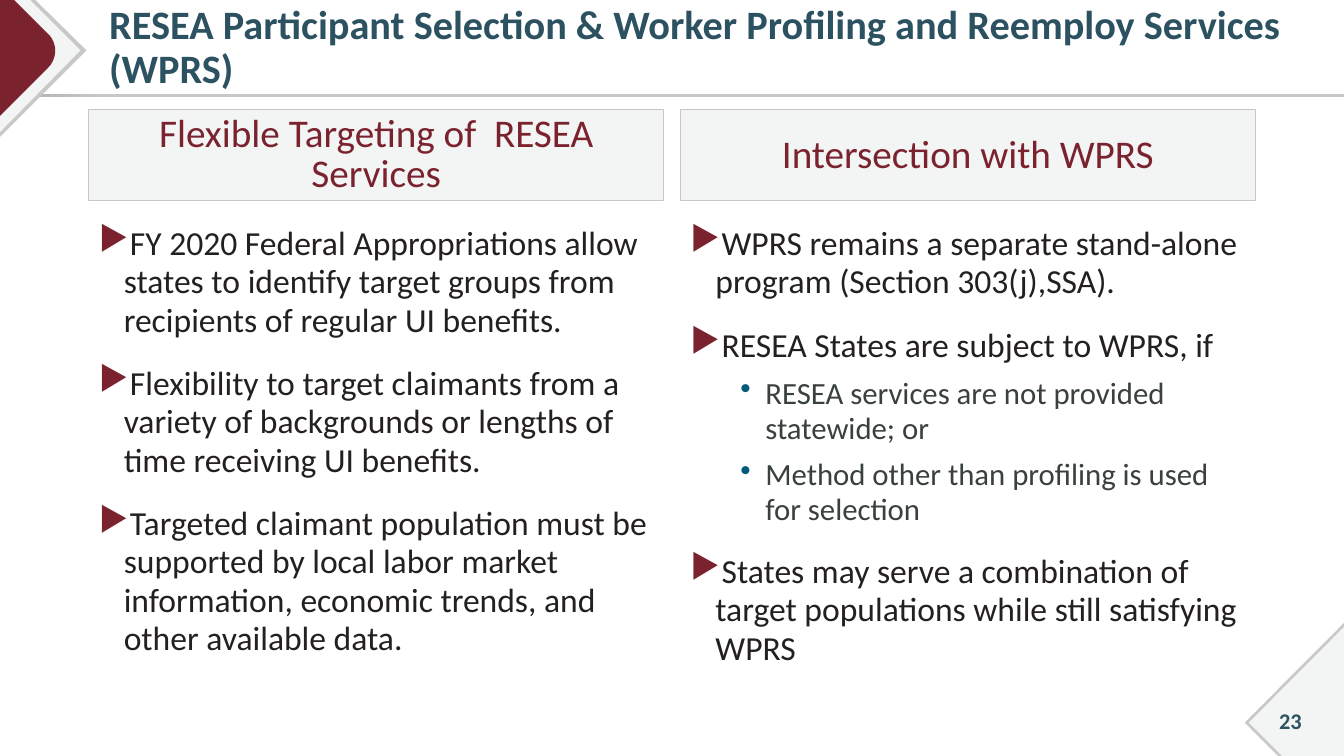
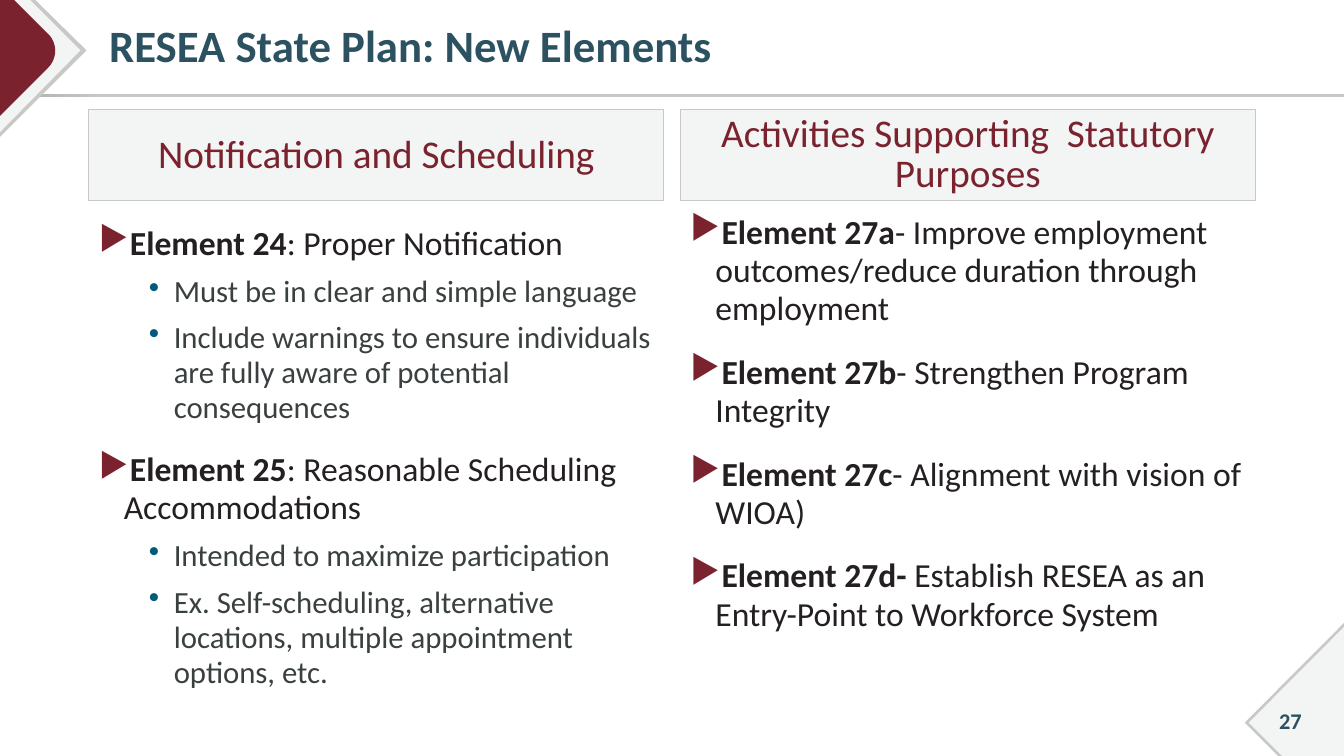
from dataclasses import dataclass

from lxml.etree import SubElement
from pptx import Presentation
from pptx.dml.color import RGBColor
from pptx.enum.shapes import MSO_SHAPE as SHAPE
from pptx.enum.text import MSO_ANCHOR as ANCHOR, MSO_AUTO_SIZE as AUTO, PP_ALIGN as ALIGN
from pptx.oxml.ns import qn
from pptx.util import Cm, Pt

FONT = "Calibri"
COLORS = {
    "title": "2C5261", "maroon": "7A232F", "gray": "C8C8C6", "dark_gray": "ABABA8",
    "pale": "F3F4F4", "body": "242021", "sub": "3A4040", "blue": "005A7C",
}
SLIDE_W, SLIDE_H = 33.87, 19.05
LEFT, COL_W, COL_PITCH = 2.24, 14.48, 14.91
HANGING = 0.63

Point = tuple[float, float]


@dataclass(frozen=True)
class Level:
    bullet: str
    bullet_color: str
    color: str
    size: float
    before: float
    margin: float


LEVELS = [
    Level("▶", "maroon", "body", 24, 18, HANGING),
    Level("•", "blue", "sub", 22, 8, 3 * HANGING),
]


@dataclass(frozen=True)
class Item:
    text: str
    lead: str = ""
    level: int = 0


@dataclass(frozen=True)
class Column:
    heading: str
    items: list[Item]
    heading_spacing: float = 0.95
    body_top: float = 5.54


@dataclass(frozen=True)
class Page:
    title: str
    number: str
    columns: list[Column]
    title_size: float = 32


@dataclass(frozen=True)
class Outline:
    points: list[Point]
    color: str


def curve(a: Point, b: Point, c: Point, d: Point, steps: int = 12) -> list[Point]:
    """Points along a cubic Bezier from a to d."""
    pts = []
    for i in range(steps + 1):
        t = i / steps
        weights = ((1 - t) ** 3, 3 * t * (1 - t) ** 2, 3 * t * t * (1 - t), t ** 3)
        pts.append(tuple(sum(w * q[k] for w, q in zip(weights, (a, b, c, d))) for k in (0, 1)))
    return pts


ROUNDED_TIP = curve((1.22, 0.86), (1.45, 1.09), (1.45, 1.47), (1.22, 1.7))
CORNERS = [
    Outline([(0, 0), (0.89, 0), (2.18, 1.27), (0, 3.45)], "gray"),
    Outline([(0, 0), (0.76, 0), (2.03, 1.27), (0, 3.33)], "pale"),
    Outline([(0, 0), (0.36, 0), *ROUNDED_TIP, (0, 2.92)], "maroon"),
    Outline([(SLIDE_W, 15.7), (SLIDE_W, SLIDE_H), (32.21, SLIDE_H), (31.37, 18.21)], "gray"),
    Outline([(SLIDE_W, 15.8), (SLIDE_W, SLIDE_H), (32.31, SLIDE_H), (31.47, 18.21)], "pale"),
]

PAGES = [
    Page("RESEA Participant Selection & Worker Profiling and Reemploy Services (WPRS)", "23", [
        Column("Flexible Targeting of  RESEA Services", [
            Item("FY 2020 Federal Appropriations allow states to identify target groups "
                 "from recipients of regular UI benefits."),
            Item("Flexibility to target claimants from a variety of backgrounds or lengths "
                 "of time receiving UI benefits."),
            Item("Targeted claimant population must be supported by local labor market "
                 "information, economic trends, and other available data."),
        ], heading_spacing=0.85),
        Column("Intersection with WPRS", [
            Item("WPRS remains a separate stand-alone program (Section 303(j),SSA)."),
            Item("RESEA States are subject to WPRS, if"),
            Item("RESEA services are not provided statewide; or", level=1),
            Item("Method other than profiling is used for selection", level=1),
            Item("States may serve a combination of target populations while still "
                 "satisfying WPRS"),
        ]),
    ], title_size=28.8),
    Page("RESEA State Plan: New Elements", "27", [
        Column("Notification and Scheduling", [
            Item(": Proper Notification", "Element 24"),
            Item("Must be in clear and simple language", level=1),
            Item("Include warnings to ensure individuals are fully aware of potential "
                 "consequences", level=1),
            Item(": Reasonable Scheduling Accommodations", "Element 25"),
            Item("Intended to maximize participation", level=1),
            Item("Ex. Self-scheduling, alternative locations, multiple appointment "
                 "options, etc.", level=1),
        ]),
        Column("Activities Supporting  Statutory Purposes", [
            Item("- Improve employment outcomes/reduce duration through employment",
                 "Element 27a"),
            Item("- Strengthen Program Integrity", "Element 27b"),
            Item("- Alignment with vision of WIOA)", "Element 27c"),
            Item("Establish RESEA as an Entry-Point to Workforce System", "Element 27d- "),
        ], heading_spacing=0.85, body_top=5.26),
    ]),
]


def rgb(name: str) -> RGBColor:
    return RGBColor.from_string(COLORS[name])


def place(sp, left: float, top: float, width: float, height: float) -> None:
    sp.left, sp.top, sp.width, sp.height = Cm(left), Cm(top), Cm(width), Cm(height)


def add_run(p, text: str, size: float, color: str, bold: bool = False) -> None:
    r = p.add_run()
    r.text = text
    r.font.name, r.font.size, r.font.bold = FONT, Pt(size), bold
    r.font.color.rgb = rgb(color)


def set_frame(tf, anchor) -> None:
    tf.word_wrap = True
    tf.auto_size = AUTO.NONE
    tf.vertical_anchor = anchor


def add_bullet(p, level: Level) -> None:
    pPr = p._p.get_or_add_pPr()
    pPr.set("marL", str(Cm(level.margin)))
    pPr.set("indent", str(-Cm(HANGING)))
    clr = SubElement(pPr, qn("a:buClr"))
    SubElement(clr, qn("a:srgbClr"), val=COLORS[level.bullet_color])
    SubElement(pPr, qn("a:buChar"), char=level.bullet)


def draw_frame(s, number: str) -> None:
    """Rule under the title, corner ornaments and slide number."""
    rule = s.shapes.add_shape(SHAPE.RECTANGLE, 0, Cm(2.36), Cm(SLIDE_W), Cm(0.08))
    rule.shadow.inherit = False
    rule.line.fill.background()
    rule.fill.gradient()
    rule.fill.gradient_angle = 0
    for stop, position, color in zip(rule.fill.gradient_stops, (0, 0.08), ("dark_gray", "gray")):
        stop.position = position
        stop.color.rgb = rgb(color)

    for corner in CORNERS:
        start, *rest = [(Cm(x), Cm(y)) for x, y in corner.points]
        builder = s.shapes.build_freeform(*start)
        builder.add_line_segments(rest, close=True)
        sp = builder.convert_to_shape()
        sp.shadow.inherit = False
        sp.fill.solid()
        sp.fill.fore_color.rgb = rgb(corner.color)
        sp.line.fill.background()

    tf = s.shapes.add_textbox(Cm(31.62), Cm(17.65), Cm(1.8), Cm(1.02)).text_frame
    set_frame(tf, ANCHOR.MIDDLE)
    p = tf.paragraphs[0]
    p.alignment = ALIGN.CENTER
    add_run(p, number, 16, "title", bold=True)


def draw_title(s, text: str, size: float) -> None:
    sp = s.shapes.title
    place(sp, LEFT, 0.13, 30.78, 2.18)
    tf = sp.text_frame
    set_frame(tf, ANCHOR.MIDDLE)
    tf.margin_left, tf.margin_right = Cm(0.51), Cm(0.25)
    p = tf.paragraphs[0]
    p.alignment = ALIGN.LEFT
    p.line_spacing = 0.9
    add_run(p, text, size, "title", bold=True)


def draw_column(s, column: Column, left: float) -> None:
    sp = s.shapes.add_shape(SHAPE.RECTANGLE, Cm(left), Cm(2.77), Cm(COL_W), Cm(2.29))
    sp.shadow.inherit = False
    sp.fill.solid()
    sp.fill.fore_color.rgb = rgb("pale")
    sp.line.color.rgb = rgb("gray")
    sp.line.width = Pt(0.75)
    set_frame(sp.text_frame, ANCHOR.MIDDLE)
    p = sp.text_frame.paragraphs[0]
    p.alignment = ALIGN.CENTER
    p.line_spacing = column.heading_spacing
    add_run(p, column.heading, 28, "maroon")

    tf = s.shapes.add_textbox(Cm(left), Cm(column.body_top), Cm(COL_W), Cm(11.66)).text_frame
    set_frame(tf, ANCHOR.TOP)
    for i, item in enumerate(column.items):
        p = tf.add_paragraph() if i else tf.paragraphs[0]
        level = LEVELS[item.level]
        add_bullet(p, level)
        p.level = item.level
        p.line_spacing = 0.95
        if i:
            p.space_before = Pt(level.before)
        if item.lead:
            add_run(p, item.lead, level.size, level.color, bold=True)
        add_run(p, item.text, level.size, level.color)


def main() -> None:
    prs = Presentation()
    prs.slide_width, prs.slide_height = Cm(SLIDE_W), Cm(SLIDE_H)
    for page in PAGES:
        s = prs.slides.add_slide(prs.slide_layouts[5])
        draw_frame(s, page.number)
        draw_title(s, page.title, page.title_size)
        for i, column in enumerate(page.columns):
            draw_column(s, column, LEFT + i * COL_PITCH)
    prs.save("out.pptx")


if __name__ == "__main__":
    main()
